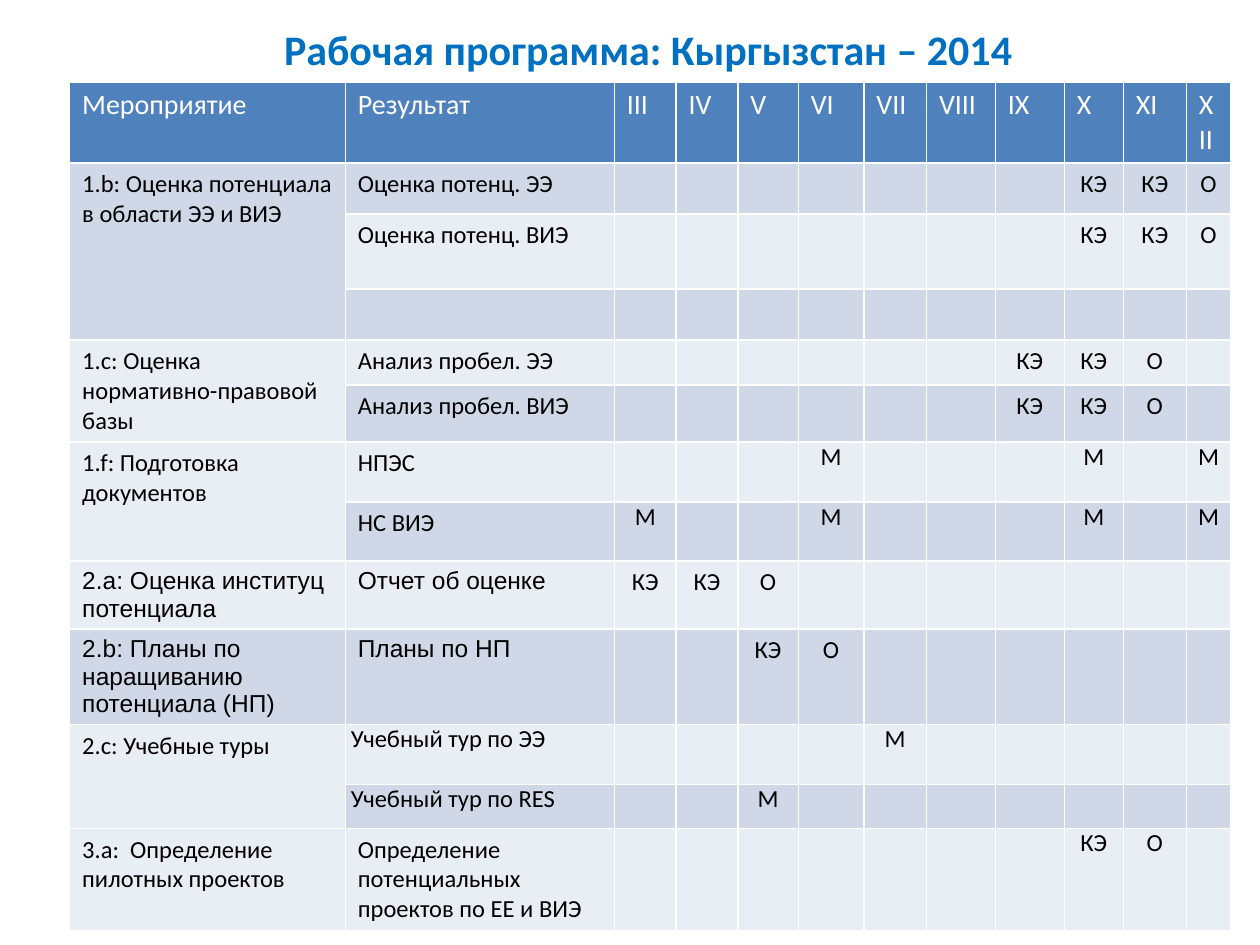
from dataclasses import dataclass, field

import lxml.etree
import pptx
import pptx.dml.color
import pptx.enum.text
import pptx.oxml.ns
import pptx.util

Pt = pptx.util.Pt
ALIGN = pptx.enum.text.PP_ALIGN


@dataclass(frozen=True)
class Theme:
    font: str = "Calibri"
    alt_font: str = "Arial"
    title_color: str = "0070C0"
    header_fill: str = "4F81BD"
    header_text: str = "FFFFFF"
    body_text: str = "000000"
    bands: tuple[str, str] = ("D0D8E8", "E9EDF4")
    title_size: float = 24
    header_size: float = 16
    body_size: float = 14


@dataclass(frozen=True)
class Task:
    height: float
    result: str
    activity: str = ""
    row_span: int = 1
    marks: dict[str, str] = field(default_factory=dict)
    flush_marks: bool = False
    flush_result: bool = False
    font: str = "Calibri"


THEME = Theme()
MONTHS = ["III", "IV", "V", "VI", "VII", "VIII", "IX", "X", "XI", "XII"]
COLUMN_WIDTHS = [157.5, 153.8, 35.3, 35.3, 34.5, 37.5, 35.8, 39.4, 39.4, 33.8, 36, 25.4]
HEADER_HEIGHT = 46.3
POTENTIAL = {"X": "КЭ", "XI": "КЭ", "XII": "О"}
GAPS = {"IX": "КЭ", "X": "КЭ", "XI": "О"}
MEETINGS = {"VI": "М", "X": "М", "XII": "М"}
TASKS = [
    Task(29.1, "Оценка потенц. ЭЭ", "1.b: Оценка потенциала в области ЭЭ и ВИЭ", 3, POTENTIAL),
    Task(42.9, "Оценка потенц. ВИЭ", marks=POTENTIAL),
    Task(29.1, ""),
    Task(25.7, "Анализ пробел. ЭЭ", "1.c: Оценка  нормативно-правовой базы", 2, GAPS),
    Task(32.6, "Анализ пробел. ВИЭ", marks=GAPS),
    Task(34.3, "НПЭС", "1.f: Подготовка документов", 2, MEETINGS, flush_marks=True),
    Task(33.8, "НС ВИЭ", marks={"III": "М", **MEETINGS}, flush_marks=True),
    Task(38.9, "Отчет об оценке", "2.a: Оценка институц потенциала",
         marks={"III": "КЭ", "IV": "КЭ", "V": "О"}, font=THEME.alt_font),
    Task(54.3, "Планы по НП", "2.b: Планы по наращиванию потенциала (НП)",
         marks={"V": "КЭ", "VI": "О"}, font=THEME.alt_font),
    Task(34.3, " Учебный тур по ЭЭ", "2.c: Учебные туры", 2, {"VII": "М"},
         flush_marks=True, flush_result=True),
    Task(25.2, " Учебный тур по RES", marks={"V": "М"}, flush_marks=True, flush_result=True),
    Task(58.3, "Определение потенциальных проектов по ЕЕ и ВИЭ",
         "3.a:  Определение пилотных проектов", marks={"X": "КЭ", "XI": "О"}, flush_marks=True),
]


def rgb(color: str) -> pptx.dml.color.RGBColor:
    return pptx.dml.color.RGBColor.from_string(color)


def add_run(p, text: str, size: float, color: str, font: str = THEME.font, bold: bool = False) -> None:
    r = p.add_run()
    r.text = text
    r.font.name = font
    r.font.size = Pt(size)
    r.font.bold = bold
    r.font.color.rgb = rgb(color)


def fill_cell(cell, text: str, fill: str, size: float = THEME.body_size,
              color: str = THEME.body_text, font: str = THEME.font,
              align: ALIGN = ALIGN.LEFT, flush: bool = False) -> None:
    """Paint a cell; an empty one still gets its type size so its row stays low."""
    cell.fill.solid()
    cell.fill.fore_color.rgb = rgb(fill)
    p = cell.text_frame.paragraphs[0]
    if not text:
        end = lxml.etree.SubElement(p._p, pptx.oxml.ns.qn("a:endParaRPr"))
        end.set("sz", str(int(size * 100)))
        return
    if flush:
        cell.margin_left = cell.margin_top = cell.margin_right = cell.margin_bottom = Pt(0)
    p.alignment = align
    add_run(p, text, size, color, font)


def add_title(s, text: str) -> None:
    sp = s.shapes.title
    sp.left, sp.top, sp.width, sp.height = Pt(73.5), Pt(0), Pt(594), Pt(56)
    tf = sp.text_frame
    tf.word_wrap = True
    tf.vertical_anchor = pptx.enum.text.MSO_ANCHOR.MIDDLE
    p = tf.paragraphs[0]
    p.alignment = ALIGN.CENTER
    add_run(p, text, THEME.title_size, THEME.title_color, bold=True)


def add_schedule(s) -> None:
    heights = [HEADER_HEIGHT] + [task.height for task in TASKS]
    table = s.shapes.add_table(len(heights), len(COLUMN_WIDTHS), Pt(39.8), Pt(46.8),
                               Pt(sum(COLUMN_WIDTHS)), Pt(sum(heights))).table
    for column, width in zip(table.columns, COLUMN_WIDTHS):
        column.width = Pt(width)
    for row, height in zip(table.rows, heights):
        row.height = Pt(height)
    for col, text in enumerate(["Мероприятие", "Результат", *MONTHS]):
        fill_cell(table.cell(0, col), text, THEME.header_fill, THEME.header_size, THEME.header_text)
    for row, task in enumerate(TASKS, start=1):
        band = THEME.bands[(row - 1) % 2]
        fill_cell(table.cell(row, 0), task.activity, band, font=task.font)
        fill_cell(table.cell(row, 1), task.result, band, font=task.font, flush=task.flush_result)
        for col, month in enumerate(MONTHS, start=2):
            fill_cell(table.cell(row, col), task.marks.get(month, ""), band,
                      align=ALIGN.CENTER, flush=task.flush_marks)
        if task.row_span > 1:
            table.cell(row, 0).merge(table.cell(row + task.row_span - 1, 0))


def main() -> None:
    prs = pptx.Presentation()
    prs.slide_width, prs.slide_height = Pt(720), Pt(540)
    s = prs.slides.add_slide(prs.slide_layouts.get_by_name("Title Only"))
    add_title(s, "Рабочая программа: Кыргызстан – 2014")
    add_schedule(s)
    prs.save("out.pptx")


if __name__ == "__main__":
    main()
